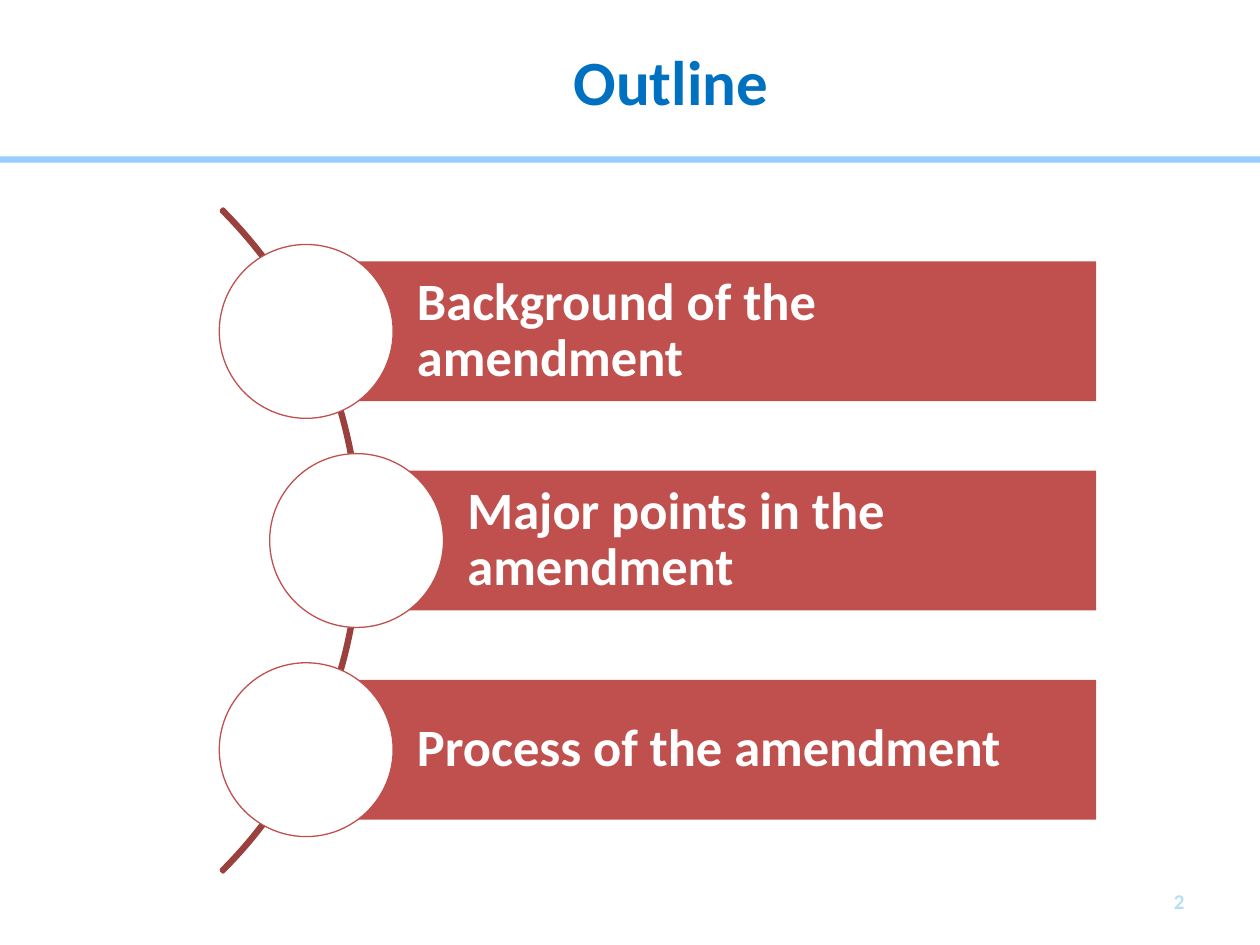
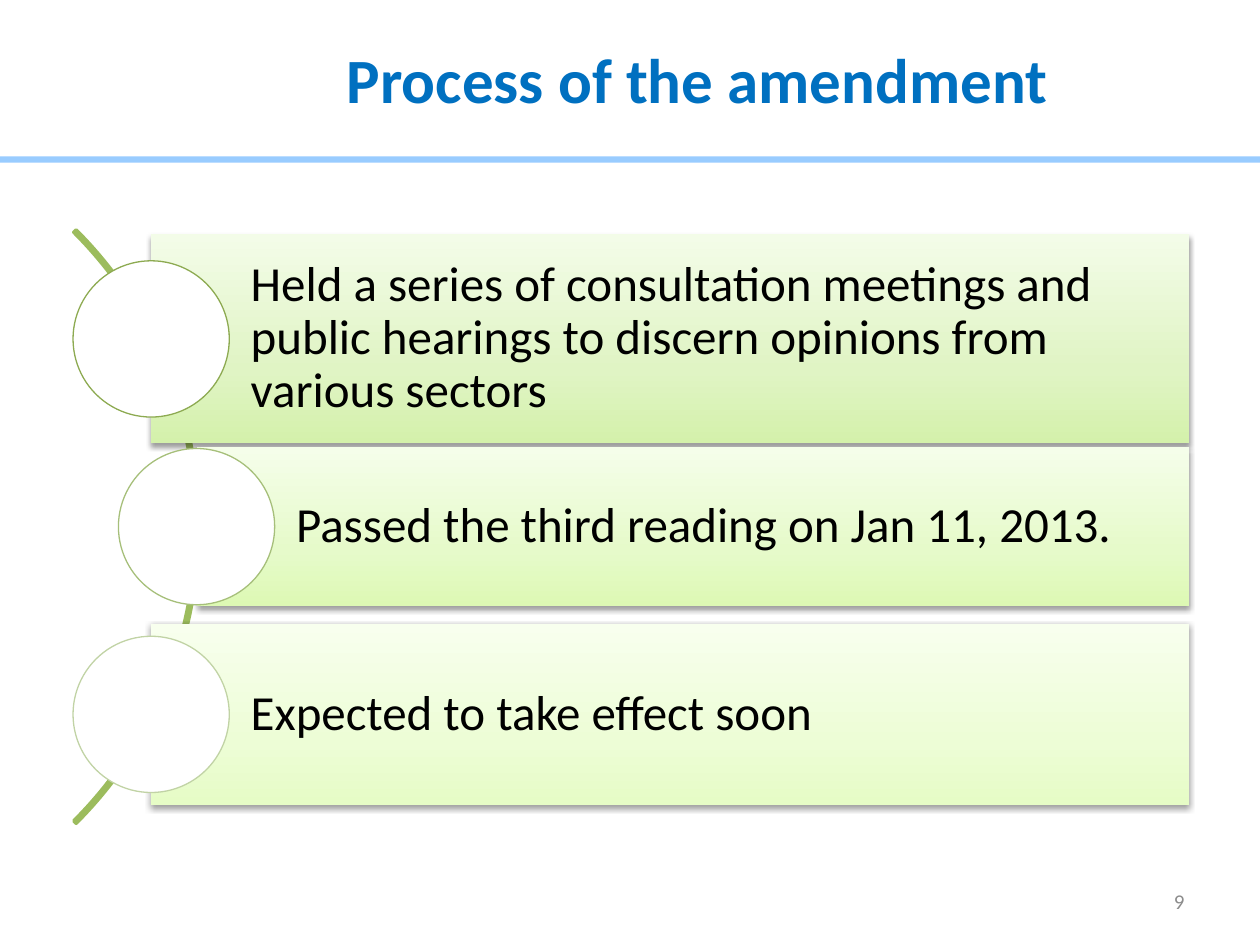
from dataclasses import dataclass

from pptx import Presentation
from pptx.dml.color import RGBColor
from pptx.enum.shapes import MSO_SHAPE
from pptx.enum.text import MSO_ANCHOR, MSO_AUTO_SIZE, PP_ALIGN
from pptx.oxml import parse_xml
from pptx.oxml.ns import nsdecls, qn
from pptx.util import Inches, Pt

FONT = "Calibri"
TITLE_BLUE = RGBColor(0x00, 0x70, 0xC0)
BAND_BLUE = RGBColor(0x99, 0xCC, 0xFF)
PALE_BLUE = RGBColor(0xB3, 0xE1, 0xF3)
GREY = RGBColor(0x8C, 0x8C, 0x8C)
WHITE = RGBColor(0xFF, 0xFF, 0xFF)
BLACK = RGBColor(0x00, 0x00, 0x00)
RED = RGBColor(0xC0, 0x50, 0x4D)
DARK_RED = RGBColor(0x9A, 0x40, 0x3E)
GREEN = RGBColor(0x9C, 0xBC, 0x5D)
RING_GREENS = (
    RGBColor(0x8D, 0xAA, 0x51),
    RGBColor(0xA6, 0xBF, 0x7A),
    RGBColor(0xC1, 0xD3, 0xA5),
)
BAR_GREENS = (
    (RGBColor(0xD4, 0xF1, 0xAB), RGBColor(0xE0, 0xF4, 0xC4), RGBColor(0xF3, 0xFC, 0xE8)),
    (RGBColor(0xDD, 0xF9, 0xB4), RGBColor(0xE6, 0xFA, 0xCA), RGBColor(0xF5, 0xFE, 0xEA)),
    (RGBColor(0xE6, 0xFC, 0xC6), RGBColor(0xED, 0xFD, 0xD6), RGBColor(0xF8, 0xFF, 0xEE)),
)
GRADIENT_POSITIONS = (0, 35000, 100000)


@dataclass
class ArcStyle:
    diameter: float
    thickness: float
    color: RGBColor
    circle: float
    text_inset: float
    text_size: int
    text_color: RGBColor
    bold: bool


@dataclass
class Topic:
    text: str
    center_x: float
    height: float
    fill: object
    ring: RGBColor


class Deck:
    def __init__(self):
        self.presentation = Presentation()
        self.presentation.slide_width = Inches(10)
        self.presentation.slide_height = Inches(7.5)
        self.layout = self.presentation.slide_layouts[5]
        self.slide = None

    def new_slide(self):
        self.slide = self.presentation.slides.add_slide(self.layout)

    def header_band(self):
        band = self.shape(MSO_SHAPE.RECTANGLE, -0.04, 1.24, 10.06, 0.05, BAND_BLUE)
        self.layout.shapes.element.append(band.element)

    def styled_run(self, paragraph, text, size, color, bold=False):
        run = paragraph.add_run()
        run.text = text
        run.font.name = FONT
        run.font.size = Pt(size)
        run.font.bold = bold
        run.font.color.rgb = color

    def title(self, text, box, left_inset=0.1, top_inset=0.05):
        title = self.slide.shapes.title
        title.left, title.top, title.width, title.height = map(Inches, box)
        frame = title.text_frame
        frame.auto_size = MSO_AUTO_SIZE.NONE
        frame.vertical_anchor = MSO_ANCHOR.TOP
        frame.margin_left = Inches(left_inset)
        frame.margin_top = Inches(top_inset)
        paragraph = frame.paragraphs[0]
        paragraph.alignment = PP_ALIGN.CENTER
        self.styled_run(paragraph, text, 36, TITLE_BLUE, True)

    def page_number(self, text, color, bold=False):
        box = self.slide.shapes.add_textbox(
            Inches(7.17), Inches(6.95), Inches(2.33), Inches(0.4)
        )
        frame = box.text_frame
        frame.word_wrap = True
        frame.vertical_anchor = MSO_ANCHOR.MIDDLE
        frame.paragraphs[0].alignment = PP_ALIGN.RIGHT
        self.styled_run(frame.paragraphs[0], text, 12, color, bold)

    def shape(self, kind, left, top, width, height, fill=None, line=None, weight=0.75):
        shape = self.slide.shapes.add_shape(
            kind, Inches(left), Inches(top), Inches(width), Inches(height)
        )
        shape.shadow.inherit = False
        if fill is None:
            shape.fill.background()
        elif isinstance(fill, RGBColor):
            shape.fill.solid()
            shape.fill.fore_color.rgb = fill
        else:
            self.shade(shape, fill)
        if line is None:
            shape.line.fill.background()
        else:
            shape.line.color.rgb = line
            shape.line.width = Pt(weight)
        return shape

    def shade(self, shape, colors):
        shape.fill.gradient()
        shape.fill.gradient_angle = 90
        properties = shape.element.spPr
        stops = properties.find(qn("a:gradFill")).find(qn("a:gsLst"))
        stops[:] = [
            parse_xml(
                f'<a:gs {nsdecls("a")} pos="{position}"><a:srgbClr val="{color}"/></a:gs>'
            )
            for position, color in zip(GRADIENT_POSITIONS, colors)
        ]
        properties.find(qn("a:effectLst")).append(parse_xml(
            f'<a:outerShdw {nsdecls("a")} blurRad="{Pt(3.1)}" dist="{Pt(1.6)}" '
            'dir="5400000" rotWithShape="0"><a:srgbClr val="000000">'
            '<a:alpha val="38000"/></a:srgbClr></a:outerShdw>'
        ))

    def topic_bar(self, topic, center_y, right, style):
        bar = self.shape(
            MSO_SHAPE.RECTANGLE, topic.center_x, center_y - topic.height / 2,
            right - topic.center_x, topic.height, topic.fill,
        )
        frame = bar.text_frame
        frame.word_wrap = True
        frame.vertical_anchor = MSO_ANCHOR.MIDDLE
        frame.margin_left = Inches(style.text_inset)
        frame.margin_top = frame.margin_right = frame.margin_bottom = Inches(0.08)
        paragraph = frame.paragraphs[0]
        paragraph.alignment = PP_ALIGN.LEFT
        paragraph.line_spacing = 0.9
        self.styled_run(
            paragraph, topic.text, style.text_size, style.text_color, style.bold
        )

    def arc_list(self, topics, arc_left, middle_y, pitch, right, style):
        arc = self.shape(
            MSO_SHAPE.BLOCK_ARC, arc_left, middle_y - style.diameter / 2,
            style.diameter, style.diameter, line=style.color, weight=2,
        )
        for index, value in enumerate((189, 27, style.thickness)):
            arc.adjustments[index] = value
        for row, topic in enumerate(topics):
            center_y = middle_y + (row - (len(topics) - 1) / 2) * pitch
            self.topic_bar(topic, center_y, right, style)
            self.shape(
                MSO_SHAPE.OVAL, topic.center_x - style.circle / 2,
                center_y - style.circle / 2, style.circle, style.circle,
                WHITE, topic.ring,
            )


def outline(deck):
    deck.title("Outline", (1.61, 0.29, 7.43, 1.02))
    deck.page_number("2", PALE_BLUE, True)
    topics = [
        Topic(text, center_x, 1.11, RED, RED)
        for text, center_x in (
            ("Background of the amendment", 2.43),
            ("Major points in the amendment", 2.83),
            ("Process of the amendment", 2.43),
        )
    ]
    style = ArcStyle(7.44, 0.003, DARK_RED, 1.38, 0.88, 30, WHITE, True)
    deck.arc_list(topics, -4.58, 4.29, 1.66, 8.7, style)


def amendment_process(deck):
    deck.title("Process of the amendment", (0.67, 0.21, 9, 1.04), 0.83, 0.11)
    steps = (
        ("Held a series of consultation meetings and public hearings "
         "to discern opinions from various sectors", 1.2, 1.66),
        ("Passed the third reading on Jan 11, 2013.", 1.56, 1.26),
        ("Expected to take effect soon", 1.2, 1.44),
    )
    topics = [
        Topic(*step, fill, ring)
        for step, fill, ring in zip(steps, BAR_GREENS, RING_GREENS)
    ]
    style = ArcStyle(6.66, 0.004, GREEN, 1.24, 0.79, 28, BLACK, False)
    deck.arc_list(topics, -5.08, 4.18, 1.49, 9.44, style)
    deck.page_number("9", GREY)


def main():
    deck = Deck()
    deck.new_slide()
    deck.header_band()
    outline(deck)
    deck.new_slide()
    amendment_process(deck)
    deck.presentation.save("out.pptx")


if __name__ == "__main__":
    main()
